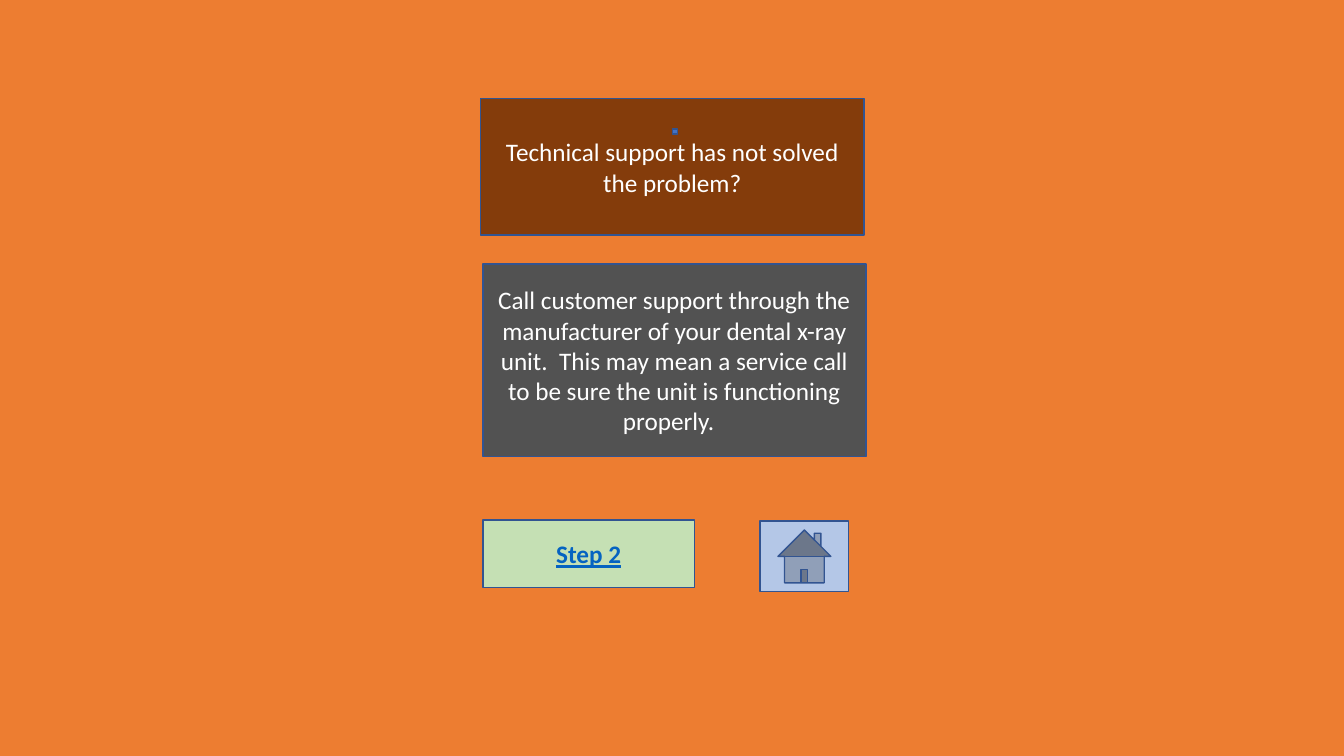
from dataclasses import dataclass

from pptx import Presentation
from pptx.dml.color import RGBColor
from pptx.enum.shapes import MSO_SHAPE
from pptx.enum.text import MSO_ANCHOR, PP_ALIGN
from pptx.shapes.autoshape import Shape
from pptx.slide import Slide
from pptx.util import Inches, Pt

PROCESS = MSO_SHAPE.FLOWCHART_PROCESS
RECTANGLE = MSO_SHAPE.RECTANGLE
HOME_BUTTON = MSO_SHAPE.ACTION_BUTTON_HOME
MIDDLE = MSO_ANCHOR.MIDDLE
CENTER = PP_ALIGN.CENTER

# Grid: ten columns and ten rows to the inch
CELL = Inches(0.1)
COLUMNS, ROWS = 133.33, 75

FONT = "Calibri"
BACKGROUND = "ED7D31"
OUTLINE = "325491"
WHITE = "FFFFFF"
LINK_BLUE = "0563C1"


@dataclass(frozen=True)
class Box:
    kind: MSO_SHAPE
    column: float
    row: float
    columns: float
    rows: float
    fill: str
    text: str = ""
    color: str = WHITE
    emphasis: bool = False


BOXES = [
    # Question and answer
    Box(PROCESS, 47.7, 9.8, 38, 13.5, "843C0B",
        "Technical support has not solved the problem?"),
    Box(PROCESS, 47.9, 26.2, 38, 19.1, "525252",
        "Call customer support through the manufacturer of your dental x-ray "
        "unit.  This may mean a service call to be sure the unit is "
        "functioning properly.  "),
    # Small marker above the question
    Box(PROCESS, 66.7, 12.8, 0.5, 0.5, "4472C4"),
    # Navigation buttons
    Box(RECTANGLE, 47.9, 51.6, 21, 6.7, "C5E0B4", "Step 2", LINK_BLUE, True),
    Box(HOME_BUTTON, 75.4, 51.7, 8.8, 7, "B4C7E7"),
]


def grid(cells: float) -> int:
    return round(cells * CELL)


def rgb(color: str) -> RGBColor:
    return RGBColor.from_string(color)


def write_text(shape: Shape, text: str, *, color: str, emphasis: bool,
               size: float = 18) -> None:
    frame = shape.text_frame
    frame.word_wrap = True
    frame.vertical_anchor = MIDDLE
    para = frame.paragraphs[0]
    para.alignment = CENTER
    span = para.add_run()
    span.text = text
    span.font.name = FONT
    span.font.size = Pt(size)
    span.font.color.rgb = rgb(color)
    span.font.bold = emphasis
    span.font.underline = emphasis


def draw_box(page: Slide, box: Box) -> None:
    shape = page.shapes.add_shape(box.kind, grid(box.column), grid(box.row),
                                  grid(box.columns), grid(box.rows))
    shape.shadow.inherit = False
    shape.fill.solid()
    shape.fill.fore_color.rgb = rgb(box.fill)
    shape.line.color.rgb = rgb(OUTLINE)
    shape.line.width = Pt(1)
    if box.text:
        write_text(shape, box.text, color=box.color, emphasis=box.emphasis)


def main() -> None:
    deck = Presentation()
    deck.slide_width, deck.slide_height = grid(COLUMNS), grid(ROWS)
    blank_layout = deck.slide_layouts[6]
    page = deck.slides.add_slide(blank_layout)
    page.background.fill.solid()
    page.background.fill.fore_color.rgb = rgb(BACKGROUND)
    for box in BOXES:
        draw_box(page, box)
    deck.save("out.pptx")


if __name__ == "__main__":
    main()
